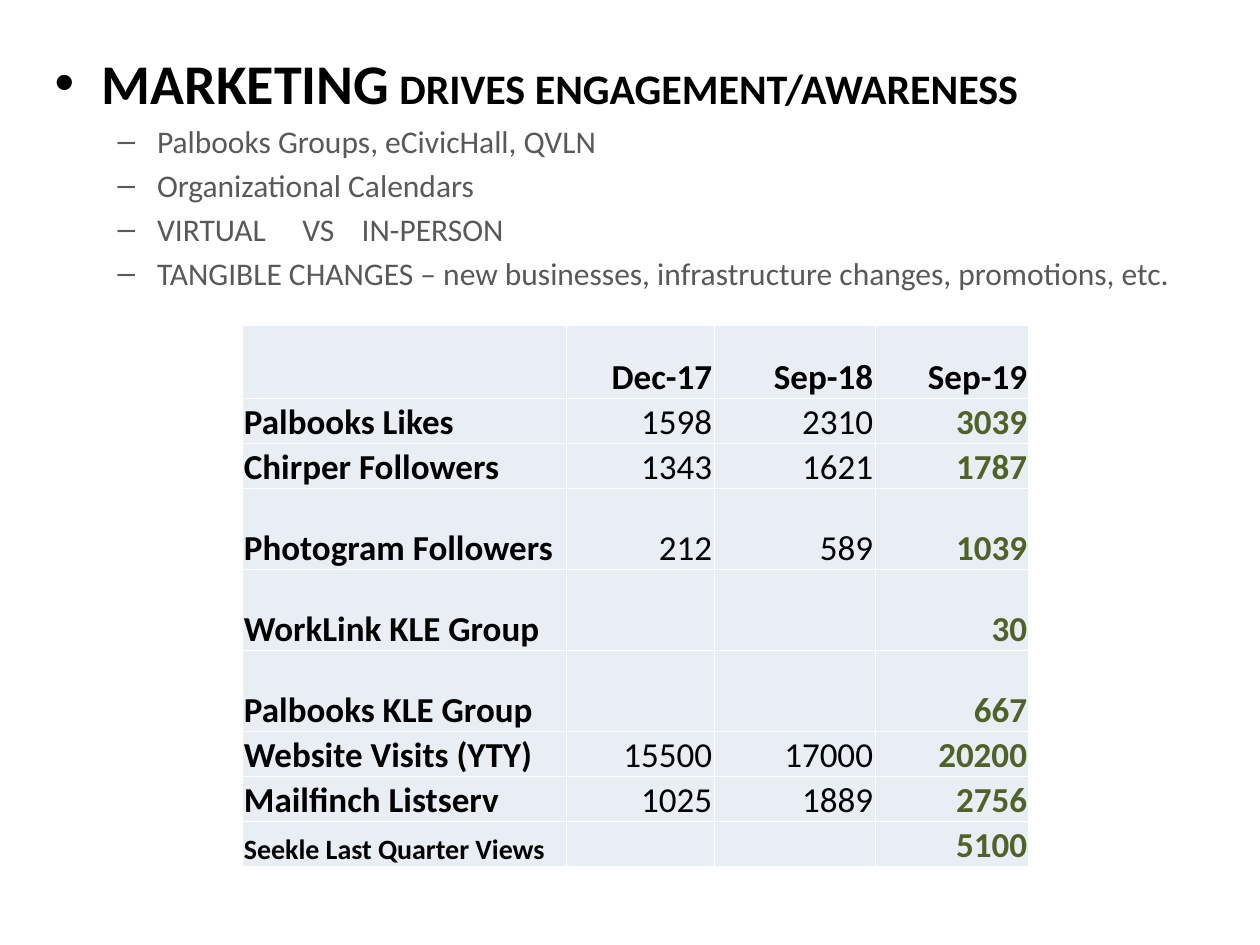
from dataclasses import dataclass

from lxml import etree
from pptx import Presentation
from pptx import util as u
from pptx.dml.color import RGBColor
from pptx.enum import text
from pptx.oxml import ns

FONT = "Calibri"
BLACK = RGBColor(0x00, 0x00, 0x00)
GRAY = RGBColor(0x59, 0x59, 0x59)
GREEN = RGBColor(0x4F, 0x62, 0x28)
WHITE = RGBColor(0xFF, 0xFF, 0xFF)
PALE = RGBColor(0xE9, 0xED, 0xF4)


@dataclass
class Span:
    wording: str
    size: float
    color: RGBColor = BLACK
    bold: bool = False


@dataclass
class Line:
    spans: list[Span]
    level: int = 0
    tabs: tuple[float, ...] = ()


@dataclass
class Metric:
    label: str
    values: tuple[str, str, str]
    height: float = 24
    label_size: float = 20


def point(wording: str, *tabs: float) -> Line:
    return Line([Span(wording, 18, GRAY)], 1, tabs)


LINES = [
    Line([Span("MARKETING", 32, bold=True),
          Span(" DRIVES ENGAGEMENT/AWARENESS", 24, bold=True)]),
    point("Palbooks Groups, eCivicHall, QVLN"),
    point("Organizational Calendars"),
    point("VIRTUAL\tVS\tIN-PERSON", 141.5, 175.5),
    point("TANGIBLE CHANGES – new businesses, infrastructure changes, promotions, etc."),
]

TALL = 46.3
METRICS = [
    Metric("", ("Dec-17", "Sep-18", "Sep-19"), 42),
    Metric("Palbooks Likes", ("1598", "2310", "3039")),
    Metric("Chirper Followers", ("1343", "1621", "1787")),
    Metric("Photogram Followers", ("212", "589", "1039"), TALL),
    Metric("WorkLink KLE Group", ("", "", "30"), TALL),
    Metric("Palbooks KLE Group", ("", "", "667"), TALL),
    Metric("Website Visits (YTY)", ("15500", "17000", "20200")),
    Metric("Mailfinch Listserv", ("1025", "1889", "2756")),
    Metric("Seekle Last Quarter Views", ("", "", "5100"), label_size=16),
]
COLUMN_WIDTHS = (185.5, 84.5, 92, 88)


def add_span(para, span: Span) -> None:
    run = para.add_run()
    run.text = span.wording
    formats = {"name": FONT, "size": u.Pt(span.size), "bold": span.bold}
    for name, value in formats.items():
        setattr(run.font, name, value)
    run.font.color.rgb = span.color


def set_tabs(para, tabs: tuple[float, ...]) -> None:
    tab_list = etree.SubElement(para._p.get_or_add_pPr(), ns.qn("a:tabLst"))
    for position in tabs:
        etree.SubElement(tab_list, ns.qn("a:tab"), pos=str(u.Pt(position)), algn="l")


def fill_outline(box, lines: list[Line]) -> None:
    frame = box.text_frame
    frame.auto_size = text.MSO_AUTO_SIZE.NONE
    for index, line in enumerate(lines):
        para = frame.add_paragraph() if index else frame.paragraphs[0]
        para.level = line.level
        for span in line.spans:
            add_span(para, span)
        if line.tabs:
            set_tabs(para, line.tabs)


def set_borders(cell, color: RGBColor, width: float) -> None:
    properties = cell._tc.get_or_add_tcPr()
    for side in ("lnL", "lnR", "lnT", "lnB"):
        border = etree.SubElement(properties, ns.qn(f"a:{side}"), w=str(u.Pt(width)))
        solid = etree.SubElement(border, ns.qn("a:solidFill"))
        etree.SubElement(solid, ns.qn("a:srgbClr"), val=str(color))


def fill_cell(cell, span: Span, align) -> None:
    formats = {
        "margin_left": u.Pt(1.2), "margin_right": u.Pt(1.2),
        "margin_top": u.Pt(1.2), "margin_bottom": u.Pt(0),
        "vertical_anchor": text.MSO_ANCHOR.BOTTOM,
    }
    for name, value in formats.items():
        setattr(cell, name, value)
    set_borders(cell, WHITE, 1)
    cell.fill.solid()
    cell.fill.fore_color.rgb = PALE
    para = cell.text_frame.paragraphs[0]
    para.alignment = align
    if span.wording:
        add_span(para, span)


def add_metrics(page, metrics: list[Metric]) -> None:
    frame = page.shapes.add_table(
        len(metrics), len(COLUMN_WIDTHS), u.Pt(138.2), u.Pt(185.8),
        u.Pt(sum(COLUMN_WIDTHS)), u.Pt(sum(metric.height for metric in metrics)))
    table = frame.table
    table.first_row = table.horz_banding = False
    for column, width in zip(table.columns, COLUMN_WIDTHS):
        column.width = u.Pt(width)
    last = len(COLUMN_WIDTHS) - 1
    for r, metric in enumerate(metrics):
        table.rows[r].height = u.Pt(metric.height)
        label = Span(metric.label, metric.label_size, bold=True)
        fill_cell(table.cell(r, 0), label, text.PP_ALIGN.LEFT)
        for c, value in enumerate(metric.values, start=1):
            color = GREEN if r and c == last else BLACK
            span = Span(value, 20, color, bold=r == 0 or c == last)
            fill_cell(table.cell(r, c), span, text.PP_ALIGN.RIGHT)


def main() -> None:
    deck = Presentation()
    deck.slide_width, deck.slide_height = u.Pt(720), u.Pt(540)
    page = deck.slides.add_slide(deck.slide_layouts[1])

    # The heading is the first bullet of the outline, so no title is needed
    title = page.shapes.title.element
    title.getparent().remove(title)

    # Outline
    box = page.placeholders[1]
    frame = {"left": 24, "top": 24, "width": 672, "height": 356.4}
    for name, value in frame.items():
        setattr(box, name, u.Pt(value))
    fill_outline(box, LINES)

    # Audience figures
    add_metrics(page, METRICS)
    deck.save("out.pptx")


if __name__ == "__main__":
    main()
